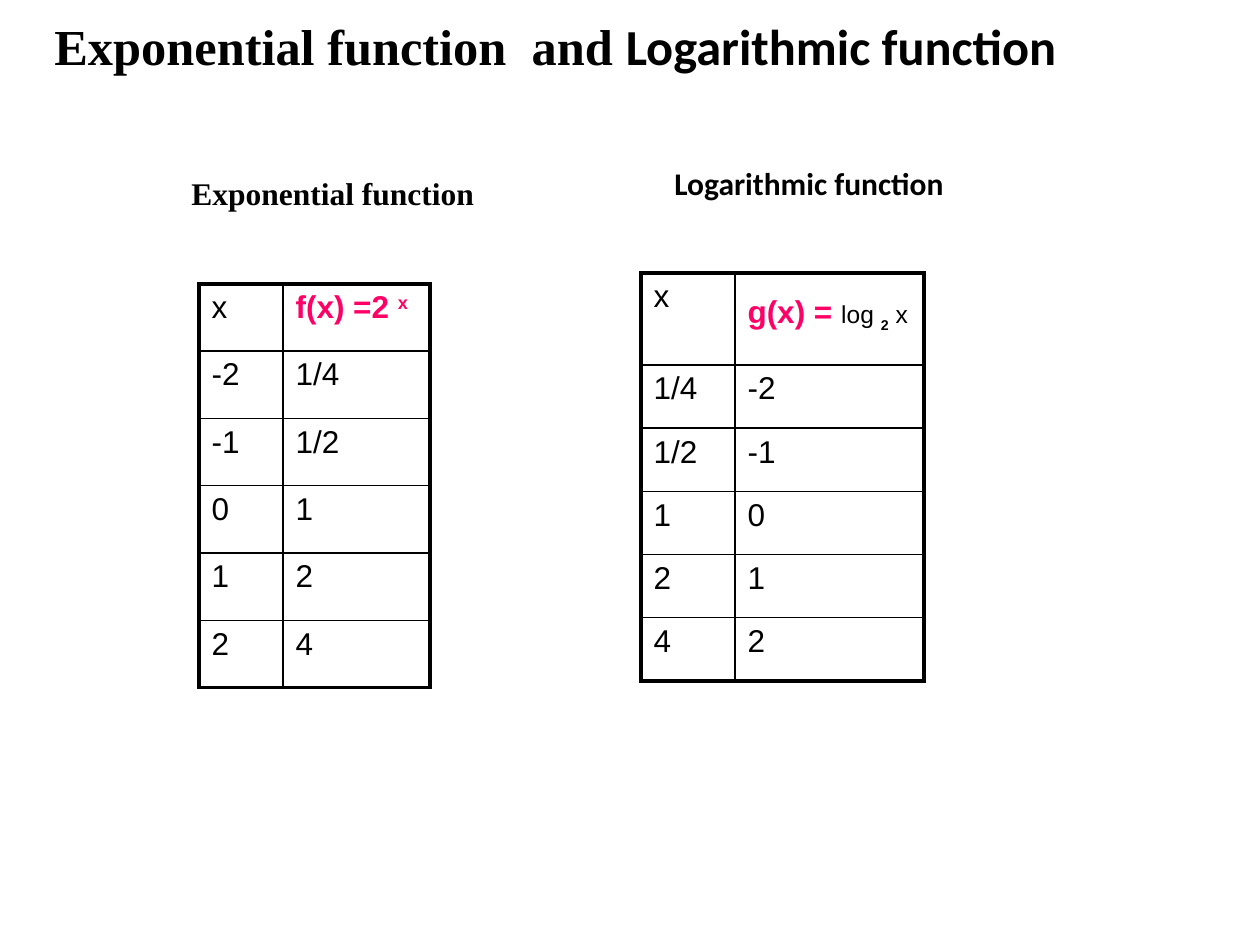
from lxml import etree
from pptx import Presentation
from pptx import util as u
from pptx.dml.color import RGBColor
from pptx.enum import text
from pptx.oxml import ns

SCALE = 914400 / 126
COLORS = {"ink": "000000", "accent": "FF0066"}
SERIF = {"name": "Times New Roman", "bold": True}
SANS = {"name": "Calibri", "bold": True}
ACCENT = {"color": "accent", "bold": True}
SMALL = {"size": 14}


def px(length):
    """Turn pixels into EMU."""
    return u.Emu(round(length * SCALE))


def add_spans(para, spans, size=18):
    """Write (wording, format) pairs into a paragraph."""
    for wording, changes in spans:
        span = para.add_run()
        span.text = wording
        values = {"name": "Arial", "size": size, "bold": False, "color": "ink", **changes}
        span.font.color.rgb = RGBColor.from_string(COLORS[values.pop("color")])
        baseline = values.pop("baseline", None)
        values["size"] = u.Pt(values["size"])
        for key, value in values.items():
            setattr(span.font, key, value)
        if baseline:
            span.font._element.set("baseline", str(baseline))


def add_heading(page, box, spans, size=18, wrap=False, anchor=text.MSO_ANCHOR.TOP):
    """Place one line of heading text in the box."""
    frame = page.shapes.add_textbox(*map(px, box)).text_frame
    frame.word_wrap = wrap
    frame.vertical_anchor = anchor
    add_spans(frame.paragraphs[0], spans, size)


def add_border(cell, side, width):
    """Draw one solid edge of a cell."""
    line = etree.SubElement(cell._tc.get_or_add_tcPr(), ns.qn(f"a:ln{side}"), w=str(u.Pt(width)))
    fill = etree.SubElement(line, ns.qn("a:solidFill"))
    etree.SubElement(fill, ns.qn("a:srgbClr"), val=COLORS["ink"])


def add_value_table(page, box, x_width, header_height, header, values):
    """Place a table of x and function values with a heavy outer frame."""
    left, top, width, height = box
    rows = [[[("x", {})], header]]
    rows += [[[(value, {})] for value in pair] for pair in values]
    grid = page.shapes.add_table(len(rows), 2, *map(px, box)).table
    grid.first_row = grid.horz_banding = False
    for column, column_width in zip(grid.columns, (x_width, width - x_width)):
        column.width = px(column_width)
    body_height = (height - header_height) / len(values)
    last = len(rows) - 1
    for r, row in enumerate(rows):
        grid.rows[r].height = px(body_height if r else header_height)
        for c, spans in enumerate(row):
            cell = grid.cell(r, c)
            outer = {"L": c == 0, "R": c == 1, "T": r == 0, "B": r == last}
            for side, heavy in outer.items():
                add_border(cell, side, 2.25 if heavy else 1)
            cell.fill.background()
            add_spans(cell.text_frame.paragraphs[0], spans)


def build_slide(page):
    """Place the title, both headings and both tables."""
    add_heading(page, (42, 3, 1092, 84),
                [("Exponential function  and ", SERIF), ("Logarithmic function", SANS)],
                size=28.8, wrap=True, anchor=text.MSO_ANCHOR.MIDDLE)
    add_heading(page, (179, 168, 311, 50), [("Exponential function", SERIF)])
    add_heading(page, (662, 158, 297, 50), [("Logarithmic function", SANS)])
    powers = [("-2", "1/4"), ("-1", "1/2"), ("0", "1"), ("1", "2"), ("2", "4")]
    add_value_table(page, (199, 284, 231, 404), 84, 67,
                    [("f(x) =2 ", ACCENT), ("x", {**ACCENT, "baseline": 30000})], powers)
    add_value_table(page, (641, 273, 283, 408), 94, 92,
                    [("g(x) = ", ACCENT), ("log ", SMALL),
                     ("2", {**SMALL, "bold": True, "baseline": -30000}),
                     (" x", SMALL), (" ", {"size": 28})],
                    [(result, exponent) for exponent, result in powers])


def main():
    """Build and save the deck."""
    deck = Presentation()
    deck.slide_width, deck.slide_height = px(1260), px(945)
    build_slide(deck.slides.add_slide(deck.slide_layouts[6]))
    deck.save("out.pptx")


if __name__ == "__main__":
    main()
